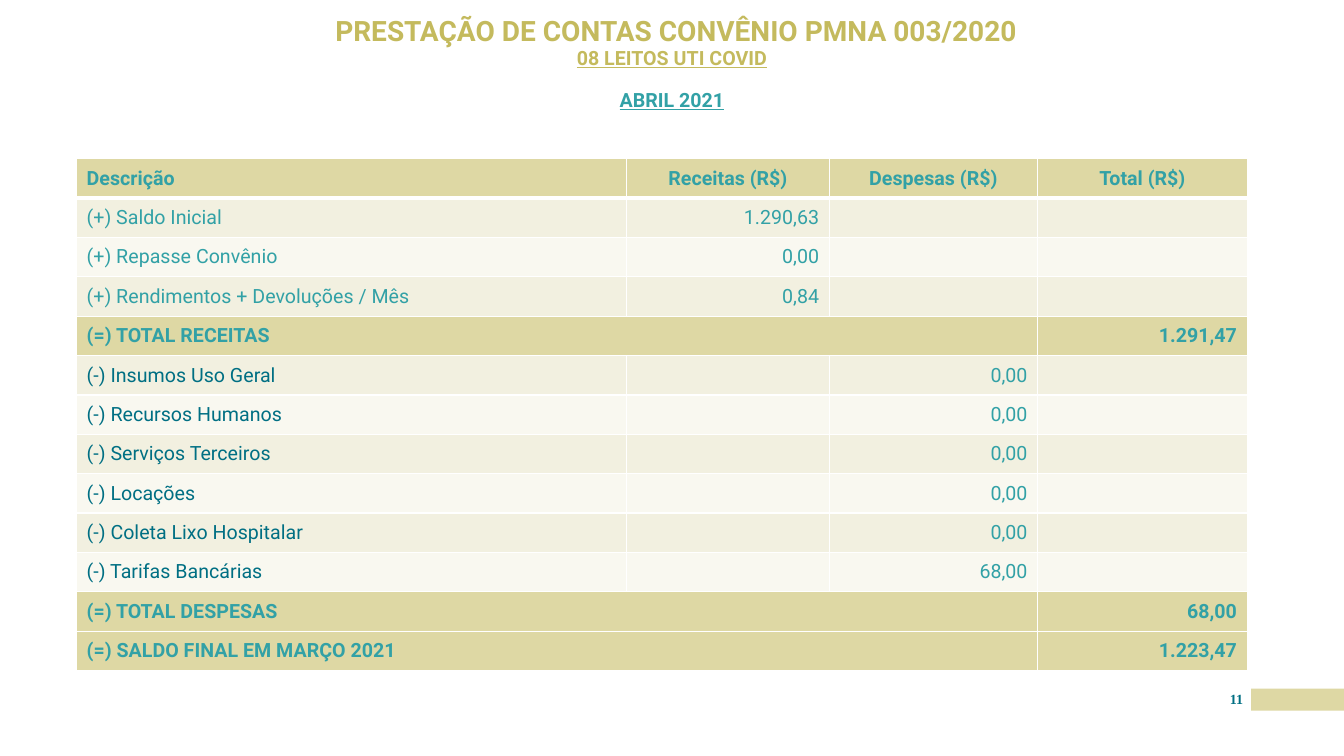
from lxml import etree
from pptx import Presentation
from pptx import util as u
from pptx.dml.color import RGBColor
from pptx.enum import shapes, text
from pptx.oxml.ns import qn

COLORS = {"gold": "C4BA5D", "sand": "DED8A4", "cream": "F2F0E0", "ivory": "F9F8F0",
          "teal": "32A1A6", "petrol": "006F83", "white": "FFFFFF"}
LEFT, CENTER, RIGHT = text.PP_ALIGN.LEFT, text.PP_ALIGN.CENTER, text.PP_ALIGN.RIGHT
WIDTH, HEIGHT = 13.33, 7.5

HEADER = ["Descrição", "Receitas (R$)", "Despesas (R$)", "Total (R$)"]
ENTRIES = [
    ("(+) Saldo Inicial", "1.290,63"),
    ("(+) Repasse Convênio", "0,00"),
    ("(+) Rendimentos + Devoluções / Mês", "0,84"),
    ("(=) TOTAL RECEITAS", "1.291,47"),
    ("(-) Insumos Uso Geral", "0,00"),
    ("(-) Recursos Humanos", "0,00"),
    ("(-) Serviços Terceiros", "0,00"),
    ("(-) Locações", "0,00"),
    ("(-) Coleta Lixo Hospitalar", "0,00"),
    ("(-) Tarifas Bancárias", "68,00"),
    ("(=) TOTAL DESPESAS", "68,00"),
    ("(=) SALDO FINAL EM MARÇO 2021", "1.223,47"),
]
VALUE_COLUMN = {"+": 1, "-": 2, "=": 3}


def add_run(p, content, size=14, color="teal", bold=False, underline=None, font="Roboto"):
    r = p.add_run()
    r.text = content
    r.font.name, r.font.size = font, u.Pt(size)
    r.font.bold, r.font.underline = bold, underline
    r.font.color.rgb = RGBColor.from_string(COLORS[color])


class Deck:
    def __init__(self):
        self.prs = Presentation()
        self.prs.slide_width, self.prs.slide_height = u.Inches(WIDTH), u.Inches(HEIGHT)
        self.slide = self.prs.slides.add_slide(self.prs.slide_layouts[6])

    def place(self, x, y, w, h):
        sw, sh = self.prs.slide_width, self.prs.slide_height
        return int(x * sw), int(y * sh), int(w * sw), int(h * sh)

    def bar(self, area, color):
        sp = self.slide.shapes.add_shape(shapes.MSO_SHAPE.RECTANGLE, *self.place(*area))
        sp.shadow.inherit = False
        sp.fill.solid()
        sp.fill.fore_color.rgb = RGBColor.from_string(COLORS[color])
        sp.line.fill.background()

    def text(self, area, lines, spacing=1.0):
        tf = self.slide.shapes.add_textbox(*self.place(*area)).text_frame
        tf.word_wrap = True
        tf.margin_left = tf.margin_right = tf.margin_top = tf.margin_bottom = 0
        for i, (before, runs) in enumerate(lines):
            p = tf.add_paragraph() if i else tf.paragraphs[0]
            p.alignment, p.line_spacing, p.space_before = CENTER, spacing, u.Pt(before)
            for content, style in runs:
                add_run(p, content, bold=True, **style)

    def cell(self, cell, fill, top=1, bottom=1):
        tc_pr = cell._tc.get_or_add_tcPr()
        for side, width in (("L", 1), ("R", 1), ("T", top), ("B", bottom)):
            ln = etree.SubElement(tc_pr, qn("a:ln" + side), w=str(u.Pt(width)))
            solid = etree.SubElement(ln, qn("a:solidFill"))
            etree.SubElement(solid, qn("a:srgbClr"), val=COLORS["white"])
        cell.fill.solid()
        cell.fill.fore_color.rgb = RGBColor.from_string(COLORS[fill])
        cell.vertical_anchor = text.MSO_ANCHOR.MIDDLE
        cell.margin_top = cell.margin_bottom = u.Inches(0.02)

    def label(self, cell, content, align, **style):
        p = cell.text_frame.paragraphs[0]
        p.alignment = align
        add_run(p, content, **style)

    def table(self, area, column_shares):
        x, y, w, h = self.place(*area)
        count = len(ENTRIES) + 1
        tbl = self.slide.shapes.add_table(count, len(HEADER), x, y, w, h).table
        for column, share in zip(tbl.columns, column_shares):
            column.width = int(w * share)
        for row in tbl.rows:
            row.height = h // count
        for c, heading in enumerate(HEADER):
            self.cell(tbl.cell(0, c), "sand", bottom=3)
            self.label(tbl.cell(0, c), heading, CENTER if c else LEFT, bold=True)
        for i, (entry, value) in enumerate(ENTRIES, 1):
            kind = entry[1]
            total = kind == "="
            fill = "sand" if total else "cream" if i % 2 else "ivory"
            for c in range(len(HEADER)):
                self.cell(tbl.cell(i, c), fill, top=3 if i == 1 else 1)
            if total:
                tbl.cell(i, 0).merge(tbl.cell(i, 2))
            self.label(tbl.cell(i, 0), entry, LEFT, bold=total,
                       color="petrol" if kind == "-" else "teal")
            self.label(tbl.cell(i, VALUE_COLUMN[kind]), value, RIGHT, bold=total)


def main():
    deck = Deck()
    deck.bar((0.931, 0.911, 0.069, 0.029), "sand")
    deck.text((0.909, 0.913, 0.022, 0.033),
              [(0, [("11", dict(size=10, color="petrol", font="Times New Roman"))])])
    deck.text((0, 0.016, 1, 0.203), [
        (0, [(" ", dict(size=24, color="gold")),
             ("PRESTAÇÃO DE CONTAS CONVÊNIO PMNA 003/2020", dict(size=20, color="gold"))]),
        (0, [("08 LEITOS UTI COVID", dict(color="gold", underline=True))]),
        (15, [("ABRIL 2021", dict(underline=True))]),
    ], spacing=0.9)
    deck.table((0.057, 0.21, 0.871, 0.677), (0.47, 0.173, 0.178, 0.179))
    deck.prs.save("out.pptx")


if __name__ == "__main__":
    main()
